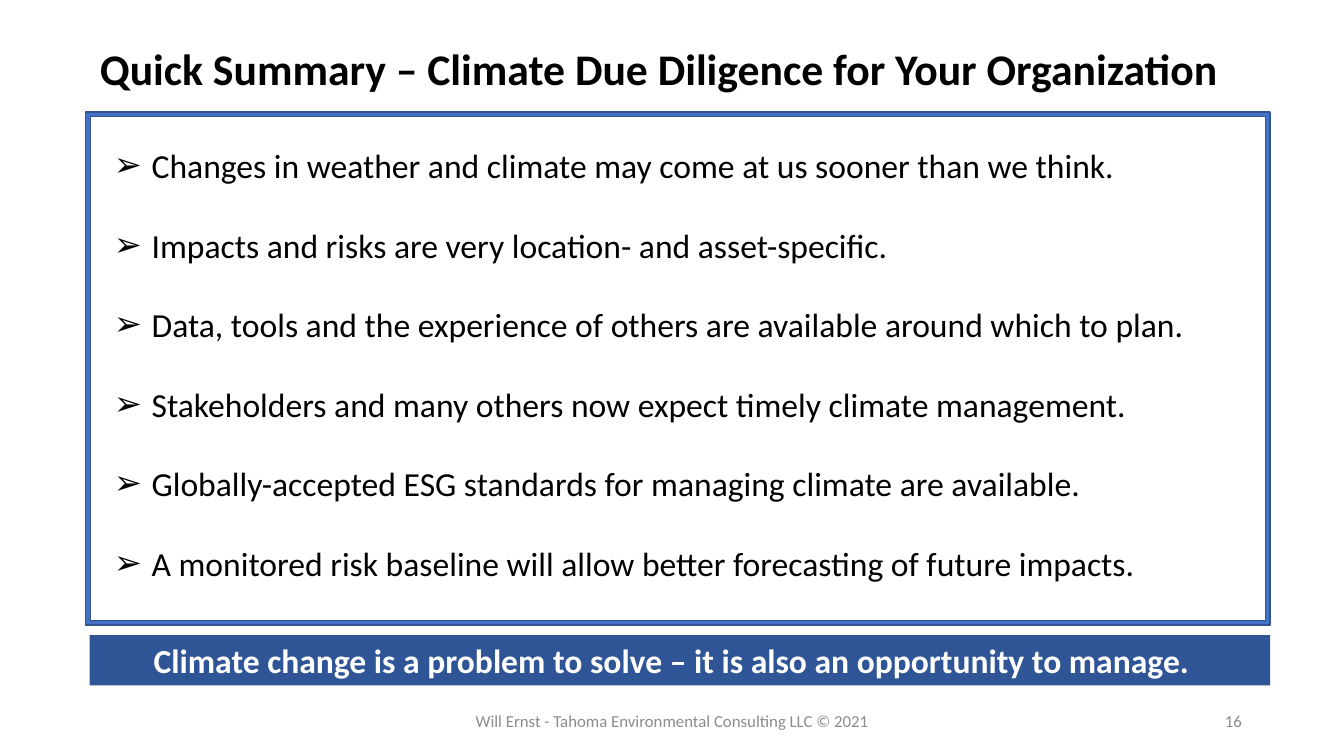
from dataclasses import dataclass

from lxml import etree
from pptx import Presentation
from pptx.dml.color import RGBColor
from pptx.enum.shapes import MSO_SHAPE
from pptx.enum.text import MSO_ANCHOR, PP_ALIGN
from pptx.oxml.ns import qn
from pptx.util import Pt

BLACK = RGBColor(0x00, 0x00, 0x00)
WHITE = RGBColor(0xFF, 0xFF, 0xFF)
GREY = RGBColor(0x8C, 0x8C, 0x8C)
FRAME_BLUE = RGBColor(0x44, 0x72, 0xC4)
EDGE_BLUE = RGBColor(0x32, 0x54, 0x91)
BANNER_BLUE = RGBColor(0x2F, 0x55, 0x97)

LEFT, CENTER, RIGHT = PP_ALIGN.LEFT, PP_ALIGN.CENTER, PP_ALIGN.RIGHT
TOP, MIDDLE = MSO_ANCHOR.TOP, MSO_ANCHOR.MIDDLE
FRAME, RECTANGLE = MSO_SHAPE.FRAME, MSO_SHAPE.RECTANGLE

FONT = "Calibri"
TITLE_ONLY = 5
BULLET_INDENT = 27


@dataclass(frozen=True)
class Area:
    left: float
    top: float
    width: float
    height: float


@dataclass(frozen=True)
class TextStyle:
    size: float
    color: RGBColor
    bold: bool = False
    align: PP_ALIGN = LEFT
    anchor: MSO_ANCHOR = MIDDLE
    line_spacing: float = 1.0
    gap: float = 0
    bullet: str = ""


@dataclass(frozen=True)
class Label:
    area: Area
    lines: tuple[str, ...]
    style: TextStyle


TITLE = Label(
    Area(64.1, 32.4, 818.6, 39.6),
    ("Quick Summary – Climate Due Diligence for Your Organization",),
    TextStyle(31.2, BLACK, bold=True, line_spacing=0.8),
)
FOOTER_STYLE = TextStyle(12, GREY, align=CENTER)
LABELS = (
    Label(
        Area(318.2, 500.4, 324, 28.8),
        ("Will Ernst - Tahoma Environmental Consulting LLC © 2021",),
        FOOTER_STYLE,
    ),
    Label(Area(678.2, 500.4, 216, 28.8), ("16",), TextStyle(12, GREY, align=RIGHT)),
    Label(
        Area(74.2, 85.7, 824.4, 337),
        (
            "Changes in weather and climate may come at us sooner than we think.",
            "Impacts and risks are very location- and asset-specific.",
            "Data, tools and the experience of others are available around which to plan.",
            "Stakeholders and many others now expect timely climate management.",
            "Globally-accepted ESG standards for managing climate are available.",
            "A monitored risk baseline will allow better forecasting of future impacts.",
        ),
        TextStyle(24, BLACK, anchor=TOP, line_spacing=1.5, gap=13.6, bullet="➢"),
    ),
)
FRAME_AREA = Area(61.2, 79.9, 846, 366.5)
BANNER = Label(
    Area(64.1, 453.6, 843.1, 36),
    ("Climate change is a problem to solve – it is also an opportunity to manage.",),
    TextStyle(24, WHITE, bold=True, align=CENTER),
)


def place(area: Area) -> tuple[Pt, Pt, Pt, Pt]:
    return Pt(area.left), Pt(area.top), Pt(area.width), Pt(area.height)


def add_bullet(para, symbol: str) -> None:
    properties = para._p.get_or_add_pPr()
    properties.set("marL", str(Pt(BULLET_INDENT)))
    properties.set("indent", str(-Pt(BULLET_INDENT)))
    etree.SubElement(properties, qn("a:buFont"), typeface="Wingdings 2" if symbol == "" else FONT)
    etree.SubElement(properties, qn("a:buChar"), char=symbol)


def write(box, label: Label) -> None:
    style = label.style
    frame = box.text_frame
    frame.text = "\n".join(label.lines)
    frame.word_wrap = True
    frame.vertical_anchor = style.anchor
    for index, para in enumerate(frame.paragraphs):
        if style.bullet:
            add_bullet(para, style.bullet)
        para.alignment = style.align
        para.line_spacing = style.line_spacing
        para.space_before = Pt(style.gap if index else 0)
        for span in para.runs:
            span.font.name = FONT
            span.font.size = Pt(style.size)
            span.font.bold = style.bold
            span.font.color.rgb = style.color


def add_block(page, kind: MSO_SHAPE, area: Area, fill: RGBColor):
    block = page.shapes.add_shape(kind, *place(area))
    block.shadow.inherit = False
    block.fill.solid()
    block.fill.fore_color.rgb = fill
    block.line.fill.background()
    return block


def main() -> None:
    deck = Presentation()
    deck.slide_width, deck.slide_height = Pt(960), Pt(540)
    page = deck.slides.add_slide(deck.slide_layouts[TITLE_ONLY])

    title = page.shapes.title
    title.left, title.top, title.width, title.height = place(TITLE.area)
    write(title, TITLE)

    for label in LABELS:
        write(page.shapes.add_textbox(*place(label.area)), label)

    border = add_block(page, FRAME, FRAME_AREA, FRAME_BLUE)
    border.adjustments[0] = 0.009
    border.line.color.rgb = EDGE_BLUE
    border.line.width = Pt(1)

    banner = add_block(page, RECTANGLE, BANNER.area, BANNER_BLUE)
    write(banner, BANNER)
    banner.text_frame.margin_right = Pt(19)

    deck.save("out.pptx")


if __name__ == "__main__":
    main()
